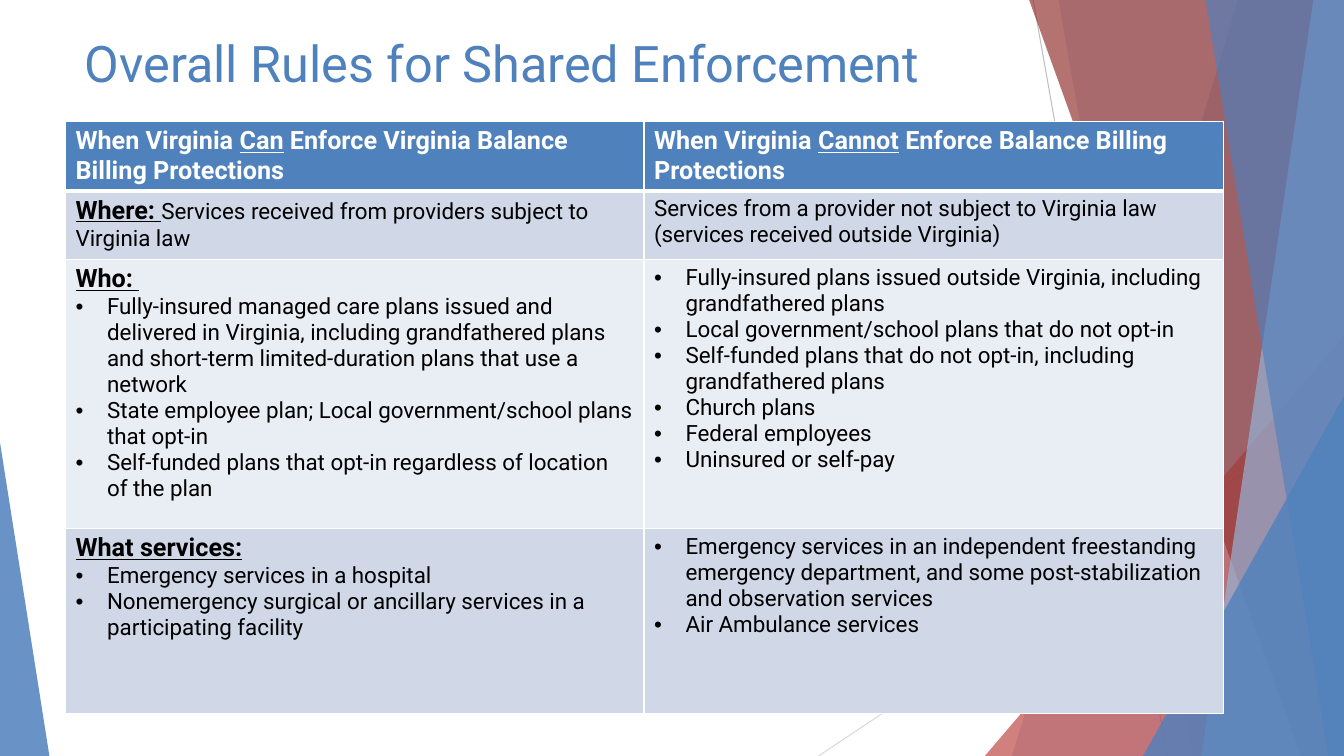
"""Builds the slide on rules for shared enforcement of balance billing."""
import pptx
import pptx.util
import pptx.dml.color
import pptx.enum.shapes
import pptx.enum.text
import pptx.oxml
import pptx.oxml.ns
from lxml import etree

Pt = pptx.util.Pt
qn = pptx.oxml.ns.qn
FONT = "Roboto"
HEX = {
    "blue": "4F81BD", "sky": "95B3D7", "red": "C0504D", "wine": "953735",
    "gray": "BFBFBF", "pale": "D9D9D9", "white": "FFFFFF", "black": "000000",
    "band": "D0D8E8", "light": "E9EDF4",
}


def rgb(name):
    return pptx.dml.color.RGBColor.from_string(HEX[name])


def paint(shape, color, alpha):
    shape.shadow.inherit = False
    shape.line.fill.background()
    shape.fill.solid()
    shape.fill.fore_color.rgb = rgb(color)
    tint = shape.fill._xPr.find(qn("a:solidFill"))[0]
    etree.SubElement(tint, qn("a:alpha"), val=str(alpha * 1000))


deck = pptx.Presentation()
deck.slide_width, deck.slide_height = Pt(960), Pt(540)
slide = deck.slides.add_slide(deck.slide_layouts[5])
shapes = slide.shapes

rays = [
    (738, 0, 833.76, 540, "gray"),
    (960, 290.16, 584.64, 540, "pale"),
]
for x1, y1, x2, y2, color in rays:
    ray = shapes.add_connector(
        pptx.enum.shapes.MSO_CONNECTOR.STRAIGHT, Pt(x1), Pt(y1), Pt(x2), Pt(y2))
    ray.line.color.rgb = rgb(color)
    ray.line.width = Pt(0.75)
    etree.SubElement(ray._element.spPr, qn("a:effectLst"))

# "blade": top x, foot x; "wedge": left, top, width, height, apex
facets = [
    ("blade", (884.16, 722.88), "blue", 30),
    ("blade", (756, 851.76), "blue", 20),
    ("wedge", (703.44, 239.76, 256.56, 300.24, 1), "red", 72),
    ("blade", (735.12, 929.52), "wine", 70),
    ("blade", (938.16, 858.24), "sky", 70),
    ("blade", (861.12, 948.96), "blue", 65),
    ("wedge", (816.48, 282.96, 143.52, 257.04, 1), "blue", 80),
    ("wedge", (0, 316.08, 35.28, 223.92, 0), "blue", 85),
]
for kind, spot, color, alpha in facets:
    if kind == "blade":
        top, foot = spot
        pen = shapes.build_freeform(Pt(top), Pt(0))
        pen.add_line_segments(
            [(Pt(960), Pt(0)), (Pt(960), Pt(540)), (Pt(foot), Pt(540))], close=True)
        facet = pen.convert_to_shape()
    else:
        facet = shapes.add_shape(
            pptx.enum.shapes.MSO_SHAPE.ISOSCELES_TRIANGLE, *map(Pt, spot[:4]))
        facet.adjustments[0] = spot[4]
    paint(facet, color, alpha)

title = shapes.title
title.left, title.top, title.width, title.height = Pt(53.3), Pt(18), Pt(676.8), Pt(53.3)
frame = title.text_frame
frame.text = "Overall Rules for Shared Enforcement"
frame.word_wrap = True
frame.auto_size = pptx.enum.text.MSO_AUTO_SIZE.NONE
frame.vertical_anchor = pptx.enum.text.MSO_ANCHOR.MIDDLE
frame.paragraphs[0].alignment = pptx.enum.text.PP_ALIGN.LEFT
font = frame.paragraphs[0].runs[0].font
font.name, font.size, font.color.rgb = FONT, Pt(36), rgb("blue")

rows = [
    (49, "blue", [
        ["When Virginia |Can| Enforce Virginia Balance Billing Protections"],
        ["When Virginia |Cannot| Enforce Balance Billing Protections"]]),
    (49, "band", [
        ["|Where: |Services received from providers subject to Virginia law"],
        ["Services from a provider not subject to Virginia law "
         "(services received outside Virginia)"]]),
    (192.3, "light", [
        ["|Who: |",
         "Fully-insured managed care plans issued and delivered in Virginia, "
         "including grandfathered plans and short-term limited-duration plans "
         "that use a network",
         "State employee plan; Local government/school plans that opt-in",
         "Self-funded plans that opt-in regardless of location of the plan"],
        ["Fully-insured plans issued outside Virginia, including grandfathered plans",
         "Local government/school plans that do not opt-in",
         "Self-funded plans that do not opt-in, including grandfathered plans",
         "Church plans",
         "Federal employees",
         "Uninsured or self-pay"]]),
    (132.3, "band", [
        ["|What services:|",
         "Emergency services in a hospital",
         "Nonemergency surgical or ancillary services in a participating facility"],
        ["Emergency services in an independent freestanding emergency department, "
         "and some post-stabilization and observation services",
         "Air Ambulance services"]]),
]
high = sum(row[0] for row in rows)
grid = shapes.add_table(
    len(rows), 2, Pt(46.8), Pt(86.8), Pt(827.2), Pt(high)).table
grid.columns[0].width, grid.columns[1].width = Pt(413.2), Pt(414)

for r, (tall, fill, cells) in enumerate(rows):
    grid.rows[r].height = Pt(tall)
    for c, lines in enumerate(cells):
        cell = grid.cell(r, c)
        props = cell._tc.get_or_add_tcPr()
        for side in "LRTB":
            thick = 3 if (r, side) in [(0, "B"), (1, "T")] else 1
            edge = etree.SubElement(props, qn("a:ln" + side), w=str(Pt(thick)))
            ink = etree.SubElement(edge, qn("a:solidFill"))
            etree.SubElement(ink, qn("a:srgbClr"), val=HEX["white"])
        cell.fill.solid()
        cell.fill.fore_color.rgb = rgb(fill)
        for n, line in enumerate(lines):
            frame = cell.text_frame
            para = frame.paragraphs[0] if n == 0 else frame.add_paragraph()
            if r > 1 and "|" not in line:
                mark = para._p.get_or_add_pPr()
                mark.set("marL", str(Pt(22.5)))
                mark.set("indent", str(-Pt(22.5)))
                etree.SubElement(mark, qn("a:buFont"), typeface="Arial")
                etree.SubElement(mark, qn("a:buChar"), char="•")
            for k, part in enumerate(line.split("|")):
                if not part:
                    continue
                run = para.add_run()
                run.text = part
                font = run.font
                strong = r == 0 or k == 1
                font.name, font.size = FONT, Pt(18 if strong else 16)
                font.bold, font.underline = strong, k == 1
                font.color.rgb = rgb("black" if r else "white")

deck.save("out.pptx")
